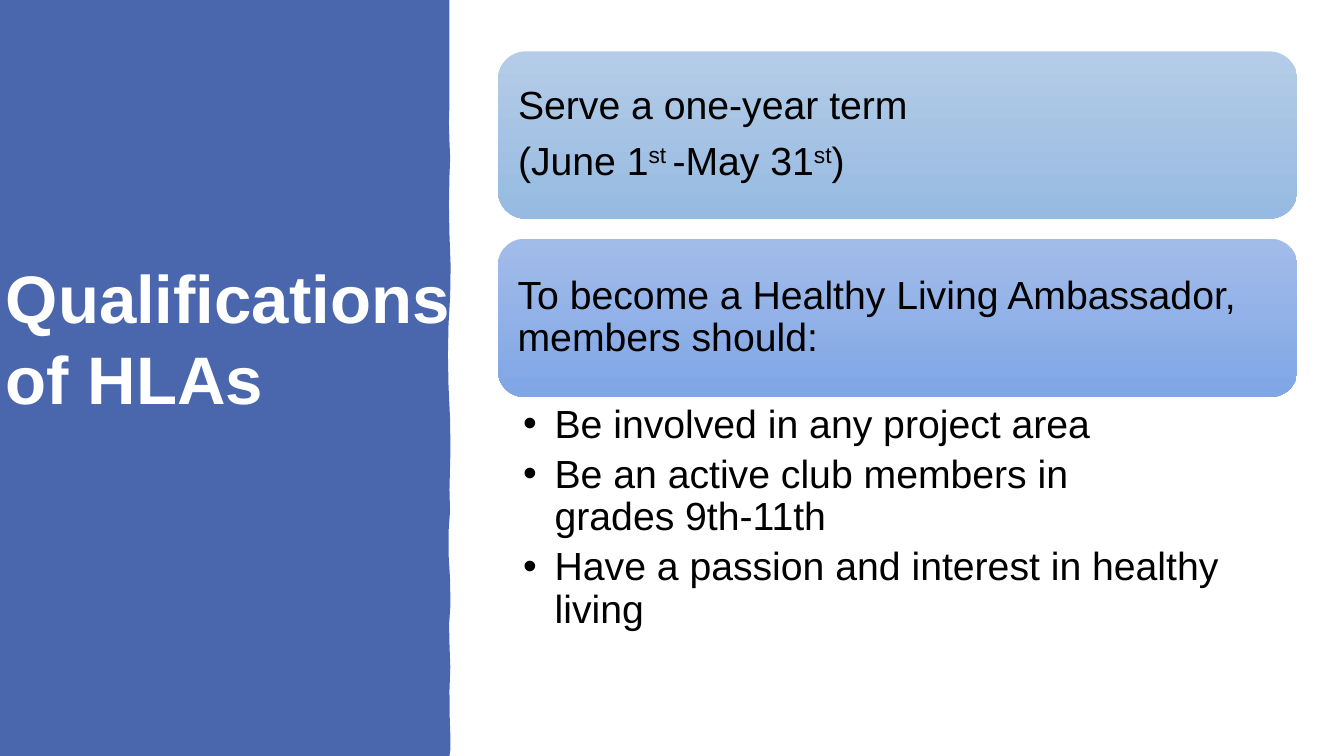
from lxml.etree import SubElement
from pptx import Presentation
from pptx.dml.color import RGBColor
from pptx.enum.shapes import MSO_SHAPE as Shape
from pptx.enum.text import MSO_ANCHOR as Anchor, PP_ALIGN as Align
from pptx.oxml.ns import qn
from pptx.util import Pt

WHITE = RGBColor(0xFF, 0xFF, 0xFF)
BLACK = RGBColor(0, 0, 0)
PANEL_BLUE = RGBColor(0x4A, 0x66, 0xAC)
TERM_TOP, TERM_BOTTOM = RGBColor(0xB4, 0xCC, 0xE7), RGBColor(0x96, 0xBA, 0xE1)
MEMBER_TOP, MEMBER_BOTTOM = RGBColor(0xA2, 0xBC, 0xE9), RGBColor(0x80, 0xA6, 0xE6)
CARD_LEFT, CARD_WIDTH = Pt(355.7), Pt(571)


def set_insets(frame, side, top):
    frame.word_wrap = True
    frame.margin_left = frame.margin_right = side
    frame.margin_top = frame.margin_bottom = top


def add_run(paragraph, text, size=28, color=BLACK):
    run = paragraph.add_run()
    run.text = text
    run.font.name = "Arial"
    run.font.size = Pt(size)
    run.font.color.rgb = color
    return run


deck = Presentation()
deck.slide_width, deck.slide_height = Pt(960), Pt(540)
slide = deck.slides.add_slide(deck.slide_layouts[6])
shapes = slide.shapes

# Blue panel with a slightly wavy right edge, in tenths of a point
wavy_edge = [
    (3211, 0), (3211, 454), (3211, 734), (3207, 875), (3211, 1015),
    (3216, 1130), (3211, 1253), (3207, 1465), (3211, 1678), (3219, 1900),
    (3216, 2110), (3204, 2318), (3200, 2535), (3204, 2758), (3215, 2985),
    (3218, 3211), (3211, 3499), (3215, 3650), (3204, 3802), (3204, 3953),
    (3215, 4135), (3218, 4320), (3208, 4460), (3211, 4601), (3217, 4765),
    (3211, 4932), (3212, 5105), (3218, 5278), (3218, 5350), (3211, 5400),
]
outline = shapes.build_freeform(0, 0, scale=Pt(0.1))
outline.add_line_segments(wavy_edge + [(0, 5400)], close=True)
panel = outline.convert_to_shape()
panel.shadow.inherit = False
panel.fill.solid()
panel.fill.fore_color.rgb = PANEL_BLUE
panel.line.fill.background()

title = shapes.add_textbox(Pt(-2.9), Pt(20.9), Pt(338.4), Pt(440)).text_frame
set_insets(title, Pt(7.2), Pt(3.6))
title.vertical_anchor = Anchor.MIDDLE
add_run(title.paragraphs[0], "Qualifications of HLAs", 48, WHITE).font.bold = True

# Each paragraph is a list of (text, is superscript)
cards = [
    (36.7, 119.5, TERM_TOP, TERM_BOTTOM, [
        [("Serve a one-year term", False)],
        [("(June 1", False), ("st ", True), ("-May 31", False), ("st", True), (")", False)],
    ]),
    (170.6, 113, MEMBER_TOP, MEMBER_BOTTOM, [
        [("To become a Healthy Living Ambassador, members should:", False)],
    ]),
]
for top, height, top_color, bottom_color, paragraphs in cards:
    card = shapes.add_shape(Shape.ROUNDED_RECTANGLE, CARD_LEFT, Pt(top), CARD_WIDTH, Pt(height))
    card.shadow.inherit = False
    card.line.fill.background()
    card.fill.gradient()
    card.fill.gradient_angle = 270
    for stop, color in zip(card.fill.gradient_stops, (top_color, bottom_color)):
        stop.color.rgb = color
    frame = card.text_frame
    set_insets(frame, Pt(8.6), Pt(8.6))
    frame.vertical_anchor = Anchor.MIDDLE
    for index, pieces in enumerate(paragraphs):
        paragraph = frame.add_paragraph() if index else frame.paragraphs[0]
        paragraph.alignment = Align.LEFT
        paragraph.line_spacing = 0.9
        paragraph.space_after = Pt(9.8)
        for text, superscript in pieces:
            run = add_run(paragraph, text)
            if superscript:
                run.font._element.set("baseline", "30000")

requirements = [
    ["Be involved in any project area"],
    ["Be an active club members in", "grades 9th-11th"],
    ["Have a passion and interest in healthy living"],
]
frame = shapes.add_textbox(CARD_LEFT, Pt(285.8), CARD_WIDTH, Pt(218)).text_frame
set_insets(frame, Pt(18), Pt(2.9))
frame.margin_right = Pt(15.8)
for index, lines in enumerate(requirements):
    paragraph = frame.add_paragraph() if index else frame.paragraphs[0]
    paragraph.line_spacing = 0.9
    paragraph.space_after = Pt(5.6)
    properties = paragraph._p.get_or_add_pPr()
    properties.set("marL", str(Pt(22.5)))
    properties.set("indent", str(Pt(-22.5)))
    SubElement(properties, qn("a:buFont")).set("typeface", "Arial")
    SubElement(properties, qn("a:buChar")).set("char", "•")
    for number, line in enumerate(lines):
        if number:
            paragraph.add_line_break()
        add_run(paragraph, line)

deck.save("out.pptx")
